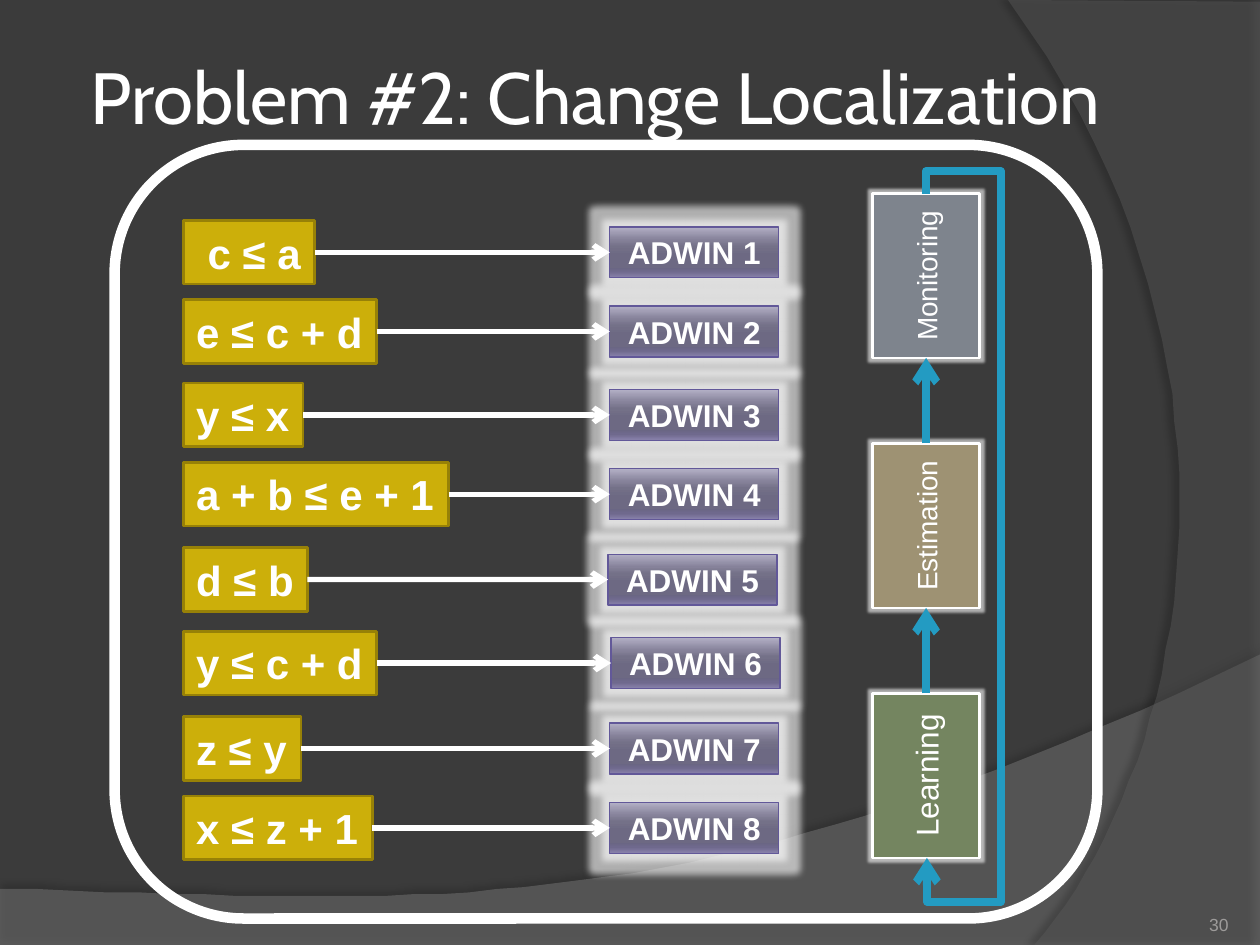
from typing import NamedTuple

from lxml import etree
from pptx import Presentation
from pptx.dml.color import RGBColor
from pptx.enum.shapes import MSO_CONNECTOR, MSO_SHAPE
from pptx.enum.text import MSO_ANCHOR, PP_ALIGN
from pptx.oxml.ns import qn
from pptx.util import Pt

RECT, ROUND_RECT, PROCESS = (MSO_SHAPE.RECTANGLE, MSO_SHAPE.ROUNDED_RECTANGLE,
                             MSO_SHAPE.FLOWCHART_PROCESS)
STRAIGHT, ELBOW = MSO_CONNECTOR.STRAIGHT, MSO_CONNECTOR.ELBOW
LEFT, CENTER, RIGHT = PP_ALIGN.LEFT, PP_ALIGN.CENTER, PP_ALIGN.RIGHT
MIDDLE, BOTTOM = MSO_ANCHOR.MIDDLE, MSO_ANCHOR.BOTTOM

BACKDROP = RGBColor(0x3B, 0x3B, 0x3B)
LOWER_WAVE = RGBColor(0x7F, 0x7F, 0x7F)
RIGHT_WAVE = RGBColor(0x5E, 0x5E, 0x5E)
BLACK = RGBColor(0, 0, 0)
WHITE = RGBColor(0xFF, 0xFF, 0xFF)
GOLD = RGBColor(0xCC, 0xAF, 0x0A)
DARK_GOLD = RGBColor(0x97, 0x81, 0x07)
PURPLE = RGBColor(0x62, 0x58, 0x99)
BLUE = RGBColor(0x23, 0x9B, 0xC2)
GREEN = RGBColor(0x74, 0x85, 0x60)
TAN = RGBColor(0x9E, 0x92, 0x73)
SLATE = RGBColor(0x7E, 0x84, 0x8D)
GREY = RGBColor(0x9D, 0x9B, 0x9A)
DETECTOR_STOPS = [(0, "B3B0C6"), (25, "86829A"), (38, "747188"), (55, "6D6983"),
                  (80, "6A6684"), (88, "6F698D"), (100, "8982AC")]


class Constraint(NamedTuple):
    text: str
    top: float
    width: float
    detector_left: float = 348.5


class Stage(NamedTuple):
    name: str
    center_y: float
    color: RGBColor
    size: float


CONSTRAINTS = [
    Constraint(" c ≤ a", 126, 74.9),
    Constraint("e ≤ c + d", 171.2, 110.2),
    Constraint("y ≤ x", 218.9, 68.2),
    Constraint("a + b ≤ e + 1", 264.2, 151.4),
    Constraint("d ≤ b", 313, 70.6, 347.5),
    Constraint("y ≤ c + d", 360.7, 110.2, 349.2),
    Constraint("z ≤ y", 409.5, 67),
    Constraint("x ≤ z + 1", 454.9, 107.8),
]
STAGES = [Stage("Learning", 443.2, GREEN, 18), Stage("Estimation", 300.4, TAN, 16),
          Stage("Monitoring", 157.5, SLATE, 16)]
CONSTRAINT_LEFT, CONSTRAINT_HEIGHT = 105, 36.4
DETECTOR_WIDTH, DETECTOR_HEIGHT = 96.5, 29.1
STAGE_X, STAGE_LENGTH, STAGE_DEPTH = 529.2, 94, 61.2


def add_effect(shape, kind: str, color: RGBColor, alpha: int, **attrs: float) -> None:
    effects = shape._element.spPr.find(qn("a:effectLst"))
    effect = etree.SubElement(effects, qn(f"a:{kind}"),
                              {name: str(int(value)) for name, value in attrs.items()})
    tint = etree.SubElement(effect, qn("a:srgbClr"), val=str(color))
    etree.SubElement(tint, qn("a:alpha"), val=str(alpha * 1000))


def write(frame, text: str, size: float, color: RGBColor, align, anchor=MIDDLE,
          bold: bool = False, font: str = "Arial") -> None:
    frame.vertical_anchor = anchor
    paragraph = frame.paragraphs[0]
    paragraph.alignment = align
    run = paragraph.add_run()
    run.text = text
    run.font.size, run.font.bold, run.font.name = Pt(size), bold, font
    run.font.color.rgb = color


def add_box(shapes, preset, left: float, top: float, width: float, height: float,
            fill: RGBColor | None, line: RGBColor, weight: float):
    box = shapes.add_shape(preset, Pt(left), Pt(top), Pt(width), Pt(height))
    box.shadow.inherit = False
    if fill is None:
        box.fill.background()
    else:
        box.fill.solid()
        box.fill.fore_color.rgb = fill
    box.line.color.rgb = line
    box.line.width = Pt(weight)
    return box


def add_arrow(shapes, kind, start: tuple, end: tuple, color: RGBColor, weight: float):
    arrow = shapes.add_connector(kind, *map(Pt, start + end))
    arrow.line.color.rgb = color
    arrow.line.width = Pt(weight)
    etree.SubElement(arrow.line._get_or_add_ln(), qn("a:tailEnd"), type="arrow")
    etree.SubElement(arrow._element.spPr, qn("a:effectLst"))
    return arrow


def curve(p0: tuple, p1: tuple, p2: tuple, p3: tuple, steps: int = 40) -> list:
    """Points along a cubic Bezier curve, both ends included."""
    def at(t: float) -> tuple:
        return tuple((1 - t) ** 3 * a + 3 * (1 - t) ** 2 * t * b
                     + 3 * (1 - t) * t ** 2 * c + t ** 3 * d
                     for a, b, c, d in zip(p0, p1, p2, p3))
    return [at(step / steps) for step in range(steps + 1)]


def add_wave(shapes, points: list, color: RGBColor, alpha: int, shadow_alpha: int,
             distance: float, direction: int) -> None:
    outline = shapes.build_freeform(*points[0], scale=Pt(1))
    outline.add_line_segments(points[1:], close=True)
    wave = outline.convert_to_shape()
    wave.shadow.inherit = False
    wave.fill.solid()
    wave.fill.fore_color.rgb = color
    tint = wave._element.spPr.find(qn("a:solidFill"))[0]
    etree.SubElement(tint, qn("a:alpha"), val=str(alpha * 1000))
    wave.line.fill.background()
    add_effect(wave, "outerShdw", BLACK, shadow_alpha, blurRad=Pt(4),
               dist=Pt(distance), dir=direction * 60000)


def add_constraint(shapes, number: int, row: Constraint) -> None:
    condition = add_box(shapes, RECT, CONSTRAINT_LEFT, row.top, row.width,
                        CONSTRAINT_HEIGHT, GOLD, DARK_GOLD, 1.5)
    condition.text_frame.word_wrap = False
    write(condition.text_frame, row.text, 24, WHITE, LEFT, bold=True)

    detector_top = row.top + (CONSTRAINT_HEIGHT - DETECTOR_HEIGHT) / 2
    detector = add_box(shapes, RECT, row.detector_left, detector_top, DETECTOR_WIDTH,
                       DETECTOR_HEIGHT, PURPLE, PURPLE, 0.75)
    detector.fill.gradient()
    detector.fill.gradient_angle = 270
    stops = detector._element.spPr.find(qn("a:gradFill")).find(qn("a:gsLst"))
    stops.clear()
    for position, color in DETECTOR_STOPS:
        stop = etree.SubElement(stops, qn("a:gs"), pos=str(position * 1000))
        etree.SubElement(stop, qn("a:srgbClr"), val=color)
    add_effect(detector, "glow", WHITE, 60, rad=Pt(8))
    write(detector.text_frame, f"ADWIN {number}", 18, WHITE, CENTER, bold=True)

    link = add_arrow(shapes, STRAIGHT, (0, 0), (1, 1), WHITE, 3)
    link.begin_connect(condition, 3)
    link.end_connect(detector, 1)


def add_stage(shapes, stage: Stage) -> None:
    box = add_box(shapes, PROCESS, STAGE_X - STAGE_LENGTH / 2,
                  stage.center_y - STAGE_DEPTH / 2, STAGE_LENGTH, STAGE_DEPTH,
                  stage.color, WHITE, 1.5)
    box.rotation = 270
    add_effect(box, "glow", WHITE, 60, rad=Pt(3))
    write(box.text_frame, stage.name, stage.size, WHITE, CENTER)


def add_feedback(shapes) -> None:
    """Five-part elbow from the top stage round to the bottom one."""
    loop = add_arrow(shapes, ELBOW, (719, 300.2), (339.6, 300.9), BLUE, 4.5)
    loop._element.spPr.find(qn("a:xfrm")).set("rot", str(270 * 60000))
    geometry = loop._element.spPr.find(qn("a:prstGeom"))
    geometry.set("prst", "bentConnector5")
    guides = geometry.find(qn("a:avLst"))
    for number, value in enumerate((-3400, 6052400, 106600), 1):
        etree.SubElement(guides, qn("a:gd"), name=f"adj{number}", fmla=f"val {value}")


def main() -> None:
    deck = Presentation()
    deck.slide_width, deck.slide_height = Pt(720), Pt(540)
    slide = deck.slides.add_slide(deck.slide_layouts[5])
    shapes = slide.shapes
    slide.background.fill.solid()
    slide.background.fill.fore_color.rgb = BACKDROP

    # Background waves
    add_wave(shapes, [(0, 507.6), (0, 540), (720, 540)]
             + curve((720, 374.4), (402.5, 524.9), (281.5, 517.7), (0, 507.6)),
             LOWER_WAVE, 45, 35, 3.5, 270)
    add_wave(shapes, [(720, 1.4), (720, 540)]
             + curve((591.1, 540), (673.2, 445.7), (733, 216), (576, 0)),
             RIGHT_WAVE, 40, 45, 4, 180)

    # Frame and title
    add_box(shapes, ROUND_RECT, 65.5, 82.8, 561.6, 442.1, None, WHITE, 6)
    title = shapes.title
    title.left, title.top, title.width, title.height = map(Pt, (48.2, 9.4, 588.2, 90))
    heading = title.text_frame
    heading.margin_left = heading.margin_right = Pt(3.6)
    write(heading, "Problem #2: Change Localization", 41.4, WHITE, LEFT, font="Cabin")
    shapes._spTree.append(title._element)

    # Constraints with their detectors
    for number, row in enumerate(CONSTRAINTS, 1):
        add_constraint(shapes, number, row)

    # Learning loop
    for stage in STAGES:
        add_stage(shapes, stage)
    for lower, upper in zip(STAGES, STAGES[1:]):
        add_arrow(shapes, STRAIGHT, (STAGE_X, lower.center_y - STAGE_LENGTH / 2),
                  (STAGE_X, upper.center_y + STAGE_LENGTH / 2), BLUE, 4.5)
    add_feedback(shapes)

    # Page number
    page = shapes.add_textbox(Pt(642.2), Pt(505.4), Pt(59.8), Pt(28.8)).text_frame
    page.word_wrap = True
    page.margin_left = page.margin_right = page.margin_top = page.margin_bottom = 0
    write(page, "30", 10, GREY, RIGHT, BOTTOM)

    deck.save("out.pptx")


if __name__ == "__main__":
    main()
